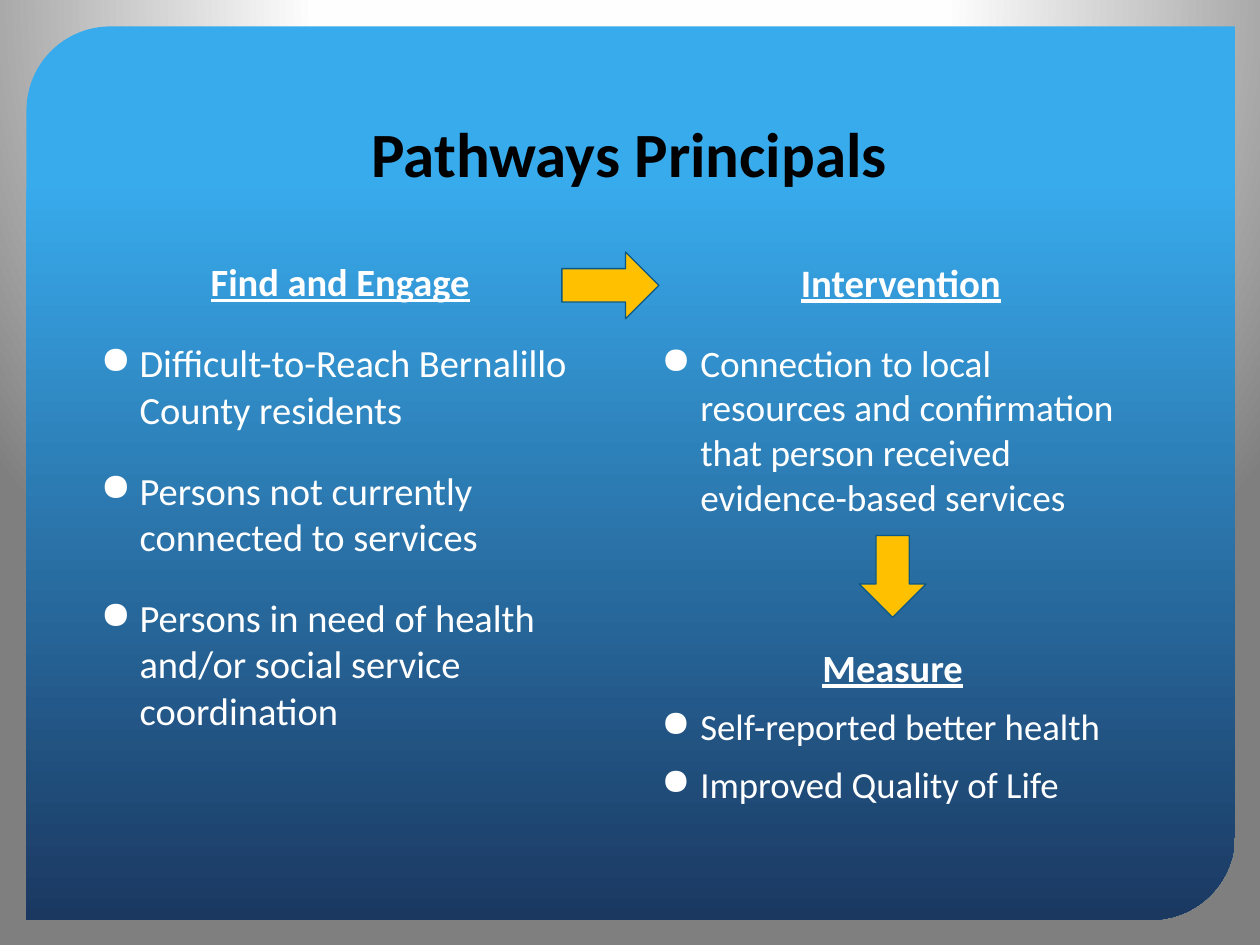
from dataclasses import dataclass

from lxml import etree
from pptx import Presentation
from pptx.dml.color import RGBColor
from pptx.enum.shapes import MSO_SHAPE
from pptx.enum.text import MSO_ANCHOR, PP_ALIGN
from pptx.oxml import parse_xml
from pptx.oxml.ns import qn
from pptx.slide import Slide
from pptx.util import Inches, Pt

PANEL_SHAPE = MSO_SHAPE.ROUND_2_DIAG_RECTANGLE
RIGHT_ARROW = MSO_SHAPE.RIGHT_ARROW
DOWN_ARROW = MSO_SHAPE.DOWN_ARROW
CENTER = PP_ALIGN.CENTER
LEFT = PP_ALIGN.LEFT
TOP = MSO_ANCHOR.TOP
BOTTOM = MSO_ANCHOR.BOTTOM

BLACK = RGBColor(0x00, 0x00, 0x00)
WHITE = RGBColor(0xFF, 0xFF, 0xFF)
SKY = RGBColor(0x38, 0xAB, 0xED)
NAVY = RGBColor(0x1B, 0x38, 0x61)
GOLD = RGBColor(0xFF, 0xC0, 0x00)
ARROW_EDGE = RGBColor(0x09, 0x58, 0x86)

FONT = "Calibri"
INDENT = Inches(0.31)
BACKDROP_GRADIENT = """
<a:gradFill xmlns:a="http://schemas.openxmlformats.org/drawingml/2006/main" rotWithShape="1">
  <a:gsLst>
    <a:gs pos="0"><a:srgbClr val="FFFFFF"/></a:gs>
    <a:gs pos="40000"><a:srgbClr val="FEFEFE"/></a:gs>
    <a:gs pos="100000"><a:srgbClr val="7F7F7F"/></a:gs>
  </a:gsLst>
  <a:path path="circle"><a:fillToRect l="50000" t="-80000" r="50000" b="180000"/></a:path>
</a:gradFill>
"""


@dataclass(frozen=True)
class Box:
    left: float
    top: float
    width: float
    height: float

    def lengths(self) -> tuple:
        return tuple(map(Inches, (self.left, self.top, self.width, self.height)))


@dataclass(frozen=True)
class Section:
    box: Box
    heading: str
    heading_size: float
    bullets: tuple[str, ...]
    bullet_size: float
    space_before: float


@dataclass(frozen=True)
class Arrow:
    kind: MSO_SHAPE
    box: Box


TITLE_BOX = Box(0.85, 0.42, 8.29, 1.14)
PANEL_BOX = Box(0.21, 0.21, 9.59, 7.09)

SECTIONS = (
    Section(Box(5.15, 2, 4, 2.25), "Intervention", 22.2,
            ("Connection to local resources and confirmation that person "
             "received evidence-based services",), 21.3, 20),
    Section(Box(5.15, 5.06, 3.87, 1.15), "Measure", 22,
            ("Self-reported better health", "Improved Quality of Life"), 21, 8),
    Section(Box(0.7, 2, 4, 4.61), "Find and Engage", 22,
            ("Difficult-to-Reach Bernalillo County residents",
             "Persons not currently connected to services",
             "Persons in need of health and/or social service coordination"), 22, 20),
)

ARROWS = (
    Arrow(RIGHT_ARROW, Box(4.46, 2, 0.77, 0.53)),
    Arrow(DOWN_ARROW, Box(6.82, 4.25, 0.53, 0.65)),
)


def paint_backdrop(slide: Slide) -> None:
    slide.background.fill.gradient()
    gradient = slide.element.find(".//" + qn("p:bgPr")).find(qn("a:gradFill"))
    gradient.getparent().replace(gradient, parse_xml(BACKDROP_GRADIENT))


def add_panel(slide: Slide) -> None:
    panel = slide.shapes.add_shape(PANEL_SHAPE, *PANEL_BOX.lengths())
    panel.shadow.inherit = False
    panel.adjustments[0] = 0.094
    panel.adjustments[1] = 0
    panel.line.fill.background()
    panel.fill.gradient()
    panel.fill.gradient_angle = 270
    for stop, position, color in zip(panel.fill.gradient_stops, (0.17, 1), (SKY, NAVY)):
        stop.position = position
        stop.color.rgb = color


def add_text_frame(slide: Slide, box: Box, anchor: MSO_ANCHOR):
    text_frame = slide.shapes.add_textbox(*box.lengths()).text_frame
    text_frame.word_wrap = True
    text_frame.vertical_anchor = anchor
    return text_frame


def add_run(paragraph, text: str, size: float, color: RGBColor,
            bold: bool = False, underline: bool = False) -> None:
    run = paragraph.add_run()
    run.text = text
    run.font.name = FONT
    run.font.size = Pt(size)
    run.font.color.rgb = color
    run.font.bold = bold
    run.font.underline = underline


def add_title(slide: Slide, text: str) -> None:
    paragraph = add_text_frame(slide, TITLE_BOX, BOTTOM).paragraphs[0]
    paragraph.alignment = CENTER
    add_run(paragraph, text, 36, BLACK, bold=True)


def add_section(slide: Slide, section: Section) -> None:
    text_frame = add_text_frame(slide, section.box, TOP)
    heading = text_frame.paragraphs[0]
    heading.alignment = CENTER
    add_run(heading, section.heading, section.heading_size, WHITE, bold=True, underline=True)
    for text in section.bullets:
        paragraph = text_frame.add_paragraph()
        paragraph.alignment = LEFT
        paragraph.space_before = Pt(section.space_before)
        properties = paragraph._p.get_or_add_pPr()
        properties.set("marL", str(INDENT))
        properties.set("indent", str(-INDENT))
        etree.SubElement(properties, qn("a:buChar")).set("char", "●")
        add_run(paragraph, text, section.bullet_size, WHITE)


def add_arrow(slide: Slide, arrow: Arrow) -> None:
    shape = slide.shapes.add_shape(arrow.kind, *arrow.box.lengths())
    shape.shadow.inherit = False
    shape.fill.solid()
    shape.fill.fore_color.rgb = GOLD
    shape.line.color.rgb = ARROW_EDGE
    shape.line.width = Pt(0.75)


def main() -> None:
    presentation = Presentation()
    presentation.slide_width = Inches(10)
    presentation.slide_height = Inches(7.5)
    slide = presentation.slides.add_slide(presentation.slide_layouts[6])
    paint_backdrop(slide)
    add_panel(slide)
    add_title(slide, "Pathways Principals")
    for section in SECTIONS:
        add_section(slide, section)
    for arrow in ARROWS:
        add_arrow(slide, arrow)
    presentation.save("out.pptx")


if __name__ == "__main__":
    main()
